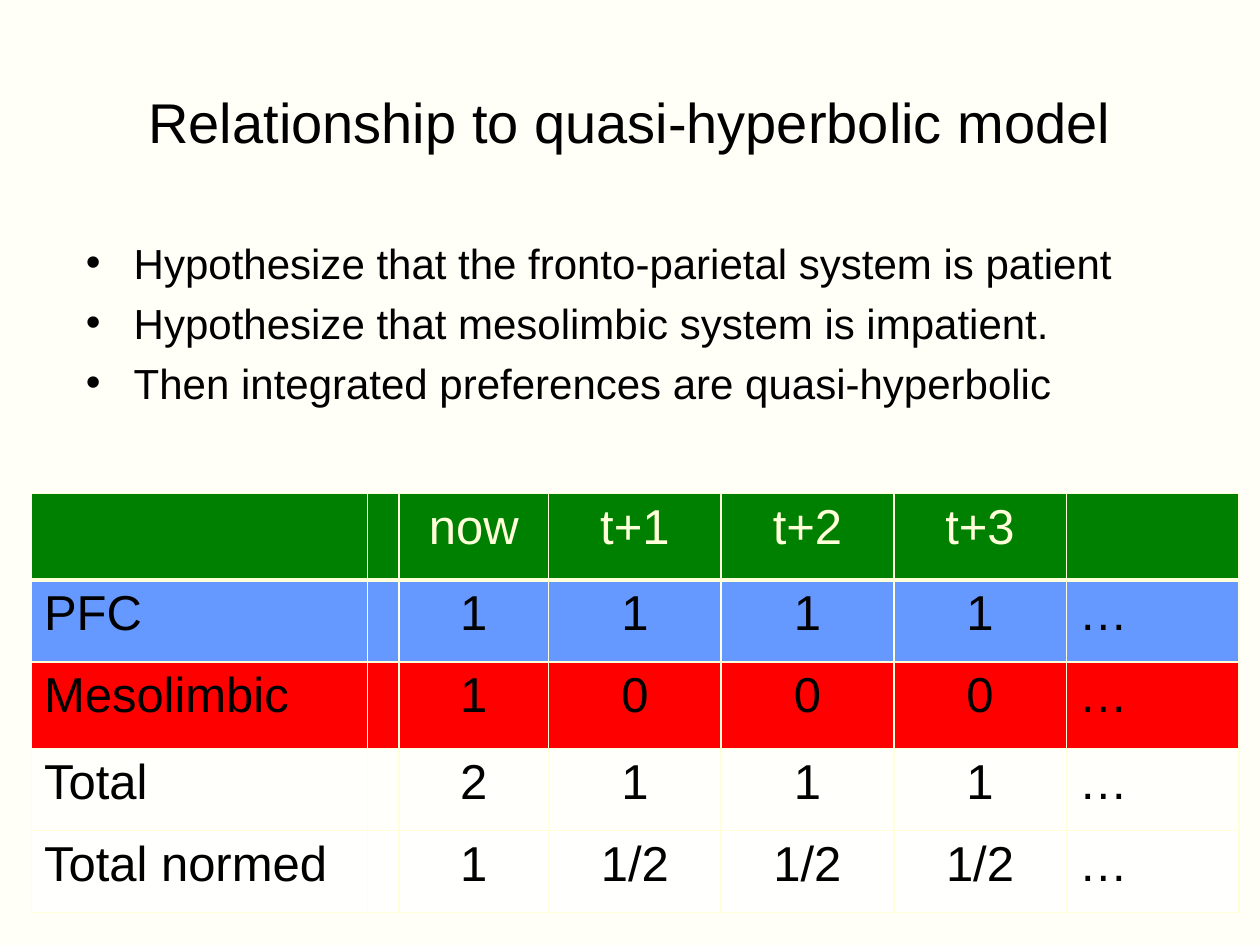
from dataclasses import dataclass
from typing import Any

from lxml.etree import SubElement
from pptx import Presentation
from pptx.dml.color import RGBColor
from pptx.enum.text import MSO_ANCHOR, PP_ALIGN
from pptx.oxml.ns import qn
from pptx.util import Inches, Pt

COLORS = {
    "page": "FFFFF7",
    "text": "000000",
    "cream": "FFFFD9",
    "header": "008000",
    "patient": "6699FF",
    "impatient": "FF0000",
    "total": "FFFFFC",
    "normed": "FFFFFD",
}
BULLETS = [
    "Hypothesize that the fronto-parietal system is patient",
    "Hypothesize that mesolimbic system is impatient.",
    "Then integrated preferences are quasi-hyperbolic",
]
COLUMN_WIDTHS = [32, 3, 14.25] + [16.44] * 4
TABLE_ROWS = [
    ("header", 8.25, ["", "", "now", "t+1", "t+2", "t+3", ""]),
    ("patient", 7.8, ["PFC", "", "1", "1", "1", "1", "…"]),
    ("impatient", 8.25, ["Mesolimbic", "", "1", "0", "0", "0", "…"]),
    ("total", 7.8, ["Total", "", "2", "1", "1", "1", "…"]),
    ("normed", 7.8, ["Total normed", "", "1", "1/2", "1/2", "1/2", "…"]),
]


def color(name):
    return RGBColor.from_string(COLORS[name])


@dataclass
class SlideBuilder:
    page: Any
    font: str = "Arial"
    units_per_inch: int = 12

    def length(self, units):
        return Inches(units / self.units_per_inch)

    def background(self, name):
        fill = self.page.background.fill
        fill.solid()
        fill.fore_color.rgb = color(name)

    def paragraph(self, para, text, size, name="text", align=PP_ALIGN.LEFT):
        para.text = text
        para.alignment = align
        for span in para.runs:
            span.font.name = self.font
            span.font.size = Pt(size)
            span.font.color.rgb = color(name)

    def text_frame(self, *place):
        box = self.page.shapes.add_textbox(*map(self.length, place))
        box.text_frame.word_wrap = True
        return box.text_frame

    def title(self, text, *place):
        frame = self.text_frame(*place)
        frame.vertical_anchor = MSO_ANCHOR.MIDDLE
        self.paragraph(frame.paragraphs[0], text, 32, align=PP_ALIGN.CENTER)

    def bullets(self, lines, *place):
        frame = self.text_frame(*place)
        frame.text = "\n".join(lines)
        for para, line in zip(frame.paragraphs, lines):
            self.paragraph(para, line, 24)
            para.space_before = Pt(5.5)
            properties = para._p.get_or_add_pPr()
            properties.set("marL", str(Inches(0.38)))
            properties.set("indent", str(-Inches(0.38)))
            SubElement(properties, qn("a:buFont"), typeface=self.font)
            SubElement(properties, qn("a:buChar"), char="•")

    def borders(self, cell, name, bottom):
        properties = cell._tc.get_or_add_tcPr()
        for side, width in (("L", 1), ("R", 1), ("T", 1), ("B", bottom)):
            line = SubElement(properties, qn(f"a:ln{side}"), w=str(Pt(width)))
            fill = SubElement(line, qn("a:solidFill"))
            SubElement(fill, qn("a:srgbClr"), val=COLORS[name])

    def table(self, rows, widths, left, top):
        height = sum(row[1] for row in rows)
        place = map(self.length, (left, top, sum(widths), height))
        table = self.page.shapes.add_table(len(rows), len(widths), *place).table
        table.first_row = table.horz_banding = False
        for column, width in zip(table.columns, widths):
            column.width = self.length(width)
        for row, (fill, height, texts) in zip(table.rows, rows):
            row.height = self.length(height)
            is_header = fill == "header"
            for index, (cell, text) in enumerate(zip(row.cells, texts)):
                self.borders(cell, "cream", 3 if is_header else 1)
                cell.fill.solid()
                cell.fill.fore_color.rgb = color(fill)
                align = PP_ALIGN.CENTER if 2 <= index <= 5 else PP_ALIGN.LEFT
                name = "cream" if is_header else "text"
                self.paragraph(cell.text_frame.paragraphs[0], text, 28, name, align)


def main():
    deck = Presentation()
    deck.slide_width, deck.slide_height = Inches(10), Inches(7.5)
    builder = SlideBuilder(deck.slides.add_slide(deck.slide_layouts[6]))
    builder.background("page")
    builder.bullets(BULLETS, 7, 22, 107, 57)
    builder.title("Relationship to quasi-hyperbolic model", 9, 4, 102, 15)
    builder.table(TABLE_ROWS, COLUMN_WIDTHS, 3, 47)
    deck.save("out.pptx")


if __name__ == "__main__":
    main()
